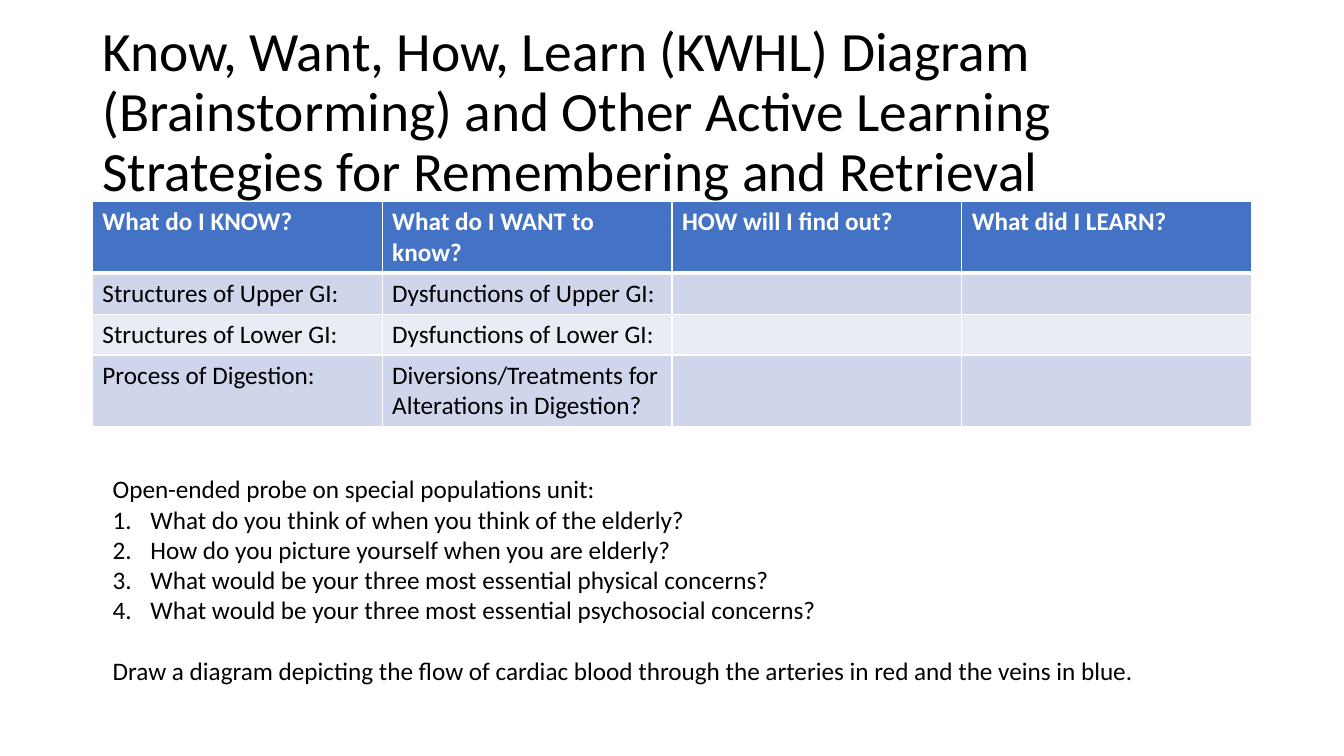
"""Build the KWHL diagram slide with its table and open-ended probe."""
import dataclasses
import typing

import lxml.etree
import pptx
import pptx.dml.color
import pptx.enum.text
import pptx.oxml
import pptx.oxml.ns
import pptx.util

Pt = pptx.util.Pt
FONT = "Calibri"
BLACK, WHITE = "000000", "FFFFFF"
HEADER_FILL, BAND_FILLS = "4472C4", ("CFD5EA", "E9EBF5")
LEFT, WIDTH = 66, 828
INDENT = 27
LINE_GAP = 22
TITLE = (
    "Know, Want, How, Learn (KWHL) Diagram (Brainstorming) and Other "
    "Active Learning Strategies for Remembering and Retrieval"
)
KWHL_ROWS = (
    ("What do I KNOW?", "What do I WANT to know?", "HOW will I find out?", "What did I LEARN?"),
    ("Structures of Upper GI:", "Dysfunctions of Upper GI:", "", ""),
    ("Structures of Lower GI:", "Dysfunctions of Lower GI:", "", ""),
    ("Process of Digestion:", "Diversions/Treatments for Alterations in Digestion?", "", ""),
)
ROW_HEIGHTS = (50.4, 29.2, 29.2, 50.4)


@dataclasses.dataclass(frozen=True)
class Line:
    """One paragraph of text with its format."""

    text: str
    size: float = 18
    colour: str = BLACK
    bold: bool = False
    numbered: bool = False
    layout: typing.Mapping[str, typing.Any] = dataclasses.field(default_factory=dict)


@dataclasses.dataclass(frozen=True)
class TextBlock:
    """A text box with its frame in points."""

    left: float
    top: float
    width: float
    height: float
    anchor: pptx.enum.text.MSO_ANCHOR
    lines: tuple[Line, ...]


QUESTIONS = (
    "What do you think of when you think of the elderly?",
    "How do you picture yourself when you are elderly?",
    "What would be your three most essential physical concerns?",
    "What would be your three most essential psychosocial concerns?",
)
BLOCKS = (
    TextBlock(LEFT, 28.8, WIDTH, 104.4, pptx.enum.text.MSO_ANCHOR.MIDDLE,
              (Line(TITLE, size=39.6, layout={"line_spacing": 0.9}),)),
    TextBlock(73.4, 334.8, 820.8, 159.8, pptx.enum.text.MSO_ANCHOR.TOP, (
        Line("Open-ended probe on special populations unit:"),
        *(Line(question, numbered=True) for question in QUESTIONS),
        Line("Draw a diagram depicting the flow of cardiac blood through the arteries "
             "in red and the veins in blue.", layout={"space_before": Pt(LINE_GAP)}),
    )),
)


def colour(value: str) -> pptx.dml.color.RGBColor:
    """Turn a hex string into a colour."""
    return pptx.dml.color.RGBColor.from_string(value)


def apply_format(target: typing.Any, values: typing.Mapping[str, typing.Any]) -> None:
    """Set each named attribute on the target."""
    for name, value in values.items():
        setattr(target, name, value)


def number_paragraph(para: typing.Any) -> None:
    """Give a paragraph a hanging automatic number."""
    properties = para._p.get_or_add_pPr()
    properties.set("marL", str(int(Pt(INDENT))))
    properties.set("indent", str(-int(Pt(INDENT))))
    numbering = lxml.etree.SubElement(properties, pptx.oxml.ns.qn("a:buAutoNum"))
    numbering.set("type", "arabicPeriod")


def write_line(para: typing.Any, line: Line) -> None:
    """Write a line into a paragraph."""
    if line.numbered:
        number_paragraph(para)
    apply_format(para, line.layout)
    span = para.add_run()
    span.text = line.text
    apply_format(span.font, {"name": FONT, "size": Pt(line.size), "bold": line.bold})
    span.font.color.rgb = colour(line.colour)


def add_block(page: typing.Any, block: TextBlock) -> None:
    """Add a text box and its paragraphs."""
    box = page.shapes.add_textbox(
        Pt(block.left), Pt(block.top), Pt(block.width), Pt(block.height))
    frame = box.text_frame
    apply_format(frame, {"word_wrap": True, "vertical_anchor": block.anchor})
    for index, line in enumerate(block.lines):
        write_line(frame.add_paragraph() if index else frame.paragraphs[0], line)


def add_borders(cell: typing.Any, widths: typing.Mapping[str, float]) -> None:
    """Draw white borders of the given widths around a cell."""
    properties = cell._tc.get_or_add_tcPr()
    for index, (side, width) in enumerate(widths.items()):
        border = pptx.oxml.parse_xml(
            f'<a:ln{side} {pptx.oxml.ns.nsdecls("a")} w="{int(Pt(width))}">'
            f'<a:solidFill><a:srgbClr val="{WHITE}"/></a:solidFill></a:ln{side}>')
        properties.insert(index, border)


def add_kwhl_table(page: typing.Any) -> None:
    """Add the KWHL table with a header and banded rows."""
    columns = len(KWHL_ROWS[0])
    table = page.shapes.add_table(
        len(KWHL_ROWS), columns, Pt(LEFT), Pt(144), Pt(WIDTH), Pt(sum(ROW_HEIGHTS))).table
    for column in table.columns:
        column.width = Pt(WIDTH / columns)
    for row, texts in enumerate(KWHL_ROWS):
        table.rows[row].height = Pt(ROW_HEIGHTS[row])
        header = row == 0
        fill = HEADER_FILL if header else BAND_FILLS[(row - 1) % 2]
        widths = {"L": 1, "R": 1, "T": 3 if row == 1 else 1, "B": 3 if header else 1}
        for column, text in enumerate(texts):
            cell = table.cell(row, column)
            cell.fill.solid()
            cell.fill.fore_color.rgb = colour(fill)
            add_borders(cell, widths)
            if text:
                line = Line(text, colour=WHITE if header else BLACK, bold=header)
                write_line(cell.text_frame.paragraphs[0], line)


def main() -> None:
    """Build and save the deck."""
    deck = pptx.Presentation()
    apply_format(deck, {"slide_width": Pt(960), "slide_height": Pt(540)})
    page = deck.slides.add_slide(deck.slide_layouts[6])
    add_kwhl_table(page)
    for block in BLOCKS:
        add_block(page, block)
    deck.save("out.pptx")


if __name__ == "__main__":
    main()
